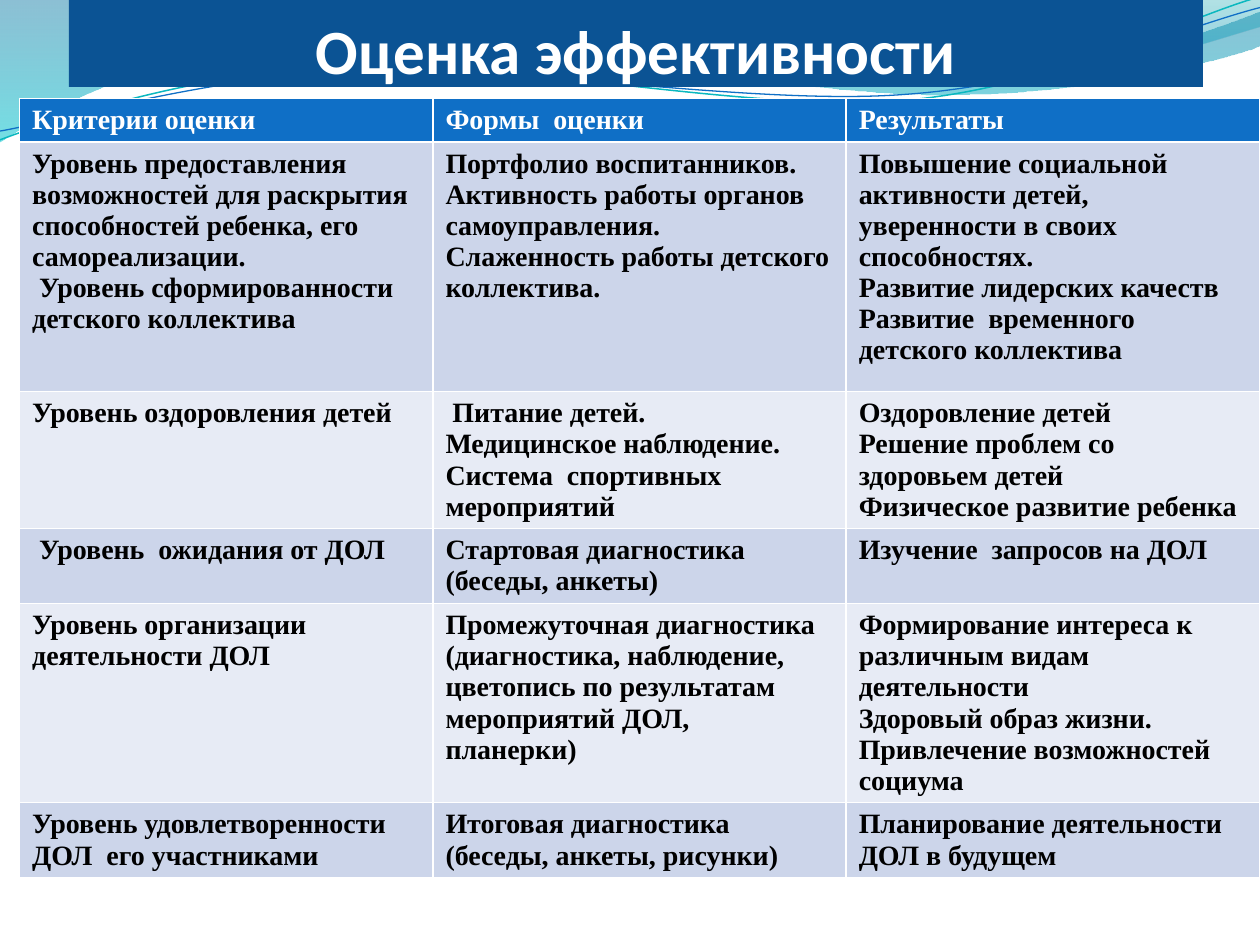
from dataclasses import dataclass
from math import cos, radians, sin
from typing import NamedTuple

from lxml.etree import SubElement as Sub
from pptx import Presentation
from pptx.dml.color import RGBColor as Rgb
from pptx.enum.text import MSO_ANCHOR as Anchor, PP_ALIGN as Align
from pptx.oxml.ns import qn
from pptx.util import Inches, Pt


@dataclass(frozen=True)
class Theme:
    white: str = "FFFFFF"
    black: str = "000000"
    title: str = "0B5394"
    head: str = "0F6FC6"
    bands: tuple = ("CCD5EA", "E7EBF5")
    big: int = 36
    small: int = 16
    sans: str = "Calibri"
    serif: str = "Times New Roman"


class Stop(NamedTuple):
    pos: float
    color: str
    alpha: int


class Wave(NamedTuple):
    start: tuple
    legs: list
    stops: tuple = ()
    color: str = ""
    width: float = 0
    hub: tuple = (0, 0)
    turn: float = 0


class Row(NamedTuple):
    high: float
    cells: list


LOOK = Theme()
WIDE, HIGH = Inches(10), Inches(7.5)
UNIT = WIDE / 100
TILT = -2.7

FILLS = [
    Wave((0, 0), [
        (44, -0.1),
        (47.6, 1.7, 66.4, 6.3, 75.8, 6.3),
        (85.3, 6.3, 95.8, 2.6, 100, 0.9),
        (100.1, 3.6),
        (98.3, 4.4, 87, 7.6, 74.6, 7.5),
        (62.2, 7.5, 38.2, 2.8, 25.7, 3.4),
        (12.9, 3.6, 4.6, 8.3, -0.1, 11.3),
        (0, 0),
    ], (Stop(0, "0074A1", 45), Stop(1, "00C6CF", 55))),
    Wave((47.9, -0.1), [
        (50.9, 1.1, 68.2, 6.2, 76.9, 6.5),
        (85.6, 6.9, 96.1, 3.2, 100, 2.1),
        (100, 0),
        (47.9, -0.1),
    ], (Stop(0, "00A1A9", 30), Stop(0.8, "008BBF", 45))),
]

LINES = [
    Wave((0, 11.1), [
        (4.8, 9.3, 15.8, 5.7, 27.7, 5.2),
        (39.5, 4.7, 59.3, 8.9, 71.3, 8),
        (83.3, 7.1, 93.8, 1.5, 99.8, -0.2),
    ], color="0AB8BF", width=0.85, hub=(49.9, 5.75), turn=TILT),
    Wave((0, 10.4), [
        (4.7, 9.6, 16.4, 6.1, 28.3, 5.6),
        (40.3, 5.1, 59.7, 8.4, 71.7, 7.5),
        (83.6, 6.7, 94.1, 2.1, 100, 0.6),
    ], color="0F6FC6", width=0.75, hub=(49.95, 5.9), turn=TILT),
]

ROWS = [
    Row(0, [["Критерии оценки"], ["Формы  оценки"], ["Результаты"]]),
    Row(19.8, [
        ["Уровень предоставления возможностей для раскрытия  способностей ребенка, его самореализации.",
         " Уровень сформированности детского коллектива"],
        ["Портфолио воспитанников.",
         "Активность работы органов самоуправления.",
         "Слаженность работы детского коллектива."],
        ["Повышение социальной активности детей, уверенности в своих способностях.",
         "Развитие лидерских качеств",
         "Развитие  временного детского коллектива"]]),
    Row(4.1, [
        ["Уровень оздоровления детей"],
        [" Питание детей.", "Медицинское наблюдение.", "Система  спортивных мероприятий"],
        ["Оздоровление детей", "Решение проблем со здоровьем детей", "Физическое развитие ребенка"]]),
    Row(4.1, [
        [" Уровень  ожидания от ДОЛ"],
        ["Стартовая диагностика", "(беседы, анкеты)"],
        ["Изучение  запросов на ДОЛ"]]),
    Row(4.1, [
        ["Уровень организации деятельности ДОЛ"],
        ["Промежуточная диагностика", "(диагностика, наблюдение,",
         "цветопись по результатам мероприятий ДОЛ,", "планерки)"],
        ["Формирование интереса к различным видам деятельности",
         "Здоровый образ жизни.", "Привлечение возможностей социума"]]),
    Row(4.1, [
        ["Уровень удовлетворенности ДОЛ  его участниками"],
        ["Итоговая диагностика", "(беседы, анкеты, рисунки)"],
        ["Планирование деятельности ДОЛ в будущем"]]),
]


def size(n: float) -> int:
    return round(n * UNIT)


def paint(fill, color: str) -> None:
    fill.solid()
    fill.fore_color.rgb = Rgb.from_string(color)


def write(para, text: str, font: str, points: int, color: str) -> None:
    run = para.add_run()
    run.text = text
    run.font.name, run.font.size, run.font.bold = font, Pt(points), True
    run.font.color.rgb = Rgb.from_string(color)


def level(wave: Wave, spot: tuple) -> tuple:
    x, y = spot[0] - wave.hub[0], spot[1] - wave.hub[1]
    c, s = cos(radians(-wave.turn)), sin(radians(-wave.turn))
    return size(wave.hub[0] + x * c - y * s), size(wave.hub[1] + x * s + y * c)


def bend(shape, legs: list) -> None:
    marks = iter(list(shape.element.spPr.iter(qn("a:lnTo"))))
    for leg in legs:
        group = [next(marks) for _ in range(len(leg) // 2)]
        if len(group) == 1:
            continue
        curve = group[0].makeelement(qn("a:cubicBezTo"))
        group[0].addprevious(curve)
        for mark in group:
            curve.append(mark[0])
            mark.getparent().remove(mark)


def draw_wave(shapes, wave: Wave) -> None:
    spots = [level(wave, leg[i:i + 2]) for leg in wave.legs for i in range(0, len(leg), 2)]
    pen = shapes.build_freeform(*level(wave, wave.start))
    pen.add_line_segments(spots, close=bool(wave.stops))
    shape = pen.convert_to_shape()
    bend(shape, wave.legs)
    shape.rotation = wave.turn
    shape.shadow.inherit = False
    if not wave.stops:
        shape.fill.background()
        paint(shape.line.fill, wave.color)
        shape.line.width = Pt(wave.width)
        return
    shape.line.fill.background()
    shape.fill.gradient()
    shape.fill.gradient_angle = 270
    for mark, stop in zip(shape.fill.gradient_stops, wave.stops):
        mark.position = stop.pos
        mark.color.rgb = Rgb.from_string(stop.color)
    tints = shape.element.spPr.iter(qn("a:srgbClr"))
    for tint, stop in zip(tints, wave.stops):
        Sub(tint, qn("a:alpha"), val=str(stop.alpha * 1000))


def draw_title(slide, text: str) -> None:
    title = slide.shapes.title
    slide.shapes.element.append(title.element)
    title.left, title.top, title.width, title.height = map(size, (5.47, 0, 90, 6.9))
    paint(title.fill, LOOK.title)
    frame = title.text_frame
    frame.word_wrap = True
    frame.vertical_anchor = Anchor.BOTTOM
    frame.margin_left = frame.margin_right = frame.margin_bottom = 0
    frame.margin_top = size(0.5)
    para = frame.paragraphs[0]
    para.alignment = Align.CENTER
    write(para, text, LOOK.sans, LOOK.big, LOOK.white)


def draw_table(slide, rows: list[Row]) -> None:
    count = len(rows[0].cells)
    high = size(64.8)
    holder = slide.shapes.add_table(len(rows), count, size(1.56), size(7.8), size(98.4), high)
    table = holder.table
    for col in table.columns:
        col.width = size(98.4 / count)
    for i, row in enumerate(rows):
        table.rows[i].height = size(row.high)
        back = LOOK.bands[(i - 1) % 2] if i else LOOK.head
        ink = LOOK.black if i else LOOK.white
        for j, lines in enumerate(row.cells):
            cell = table.cell(i, j)
            paint(cell.fill, back)
            frame = cell.text_frame
            for k, text in enumerate(lines):
                para = frame.add_paragraph() if k else frame.paragraphs[0]
                write(para, text, LOOK.serif, LOOK.small, ink)
    holder.height = high


def main() -> None:
    deck = Presentation()
    deck.slide_width, deck.slide_height = WIDE, HIGH
    slide = deck.slides.add_slide(deck.slide_layouts[5])
    paint(slide.background.fill, LOOK.white)
    for wave in FILLS:
        draw_wave(slide.shapes, wave)
    group = slide.shapes.add_group_shape()
    for wave in LINES:
        draw_wave(group.shapes, wave)
    draw_title(slide, "Оценка эффективности")
    draw_table(slide, ROWS)
    deck.save("out.pptx")


if __name__ == "__main__":
    main()
